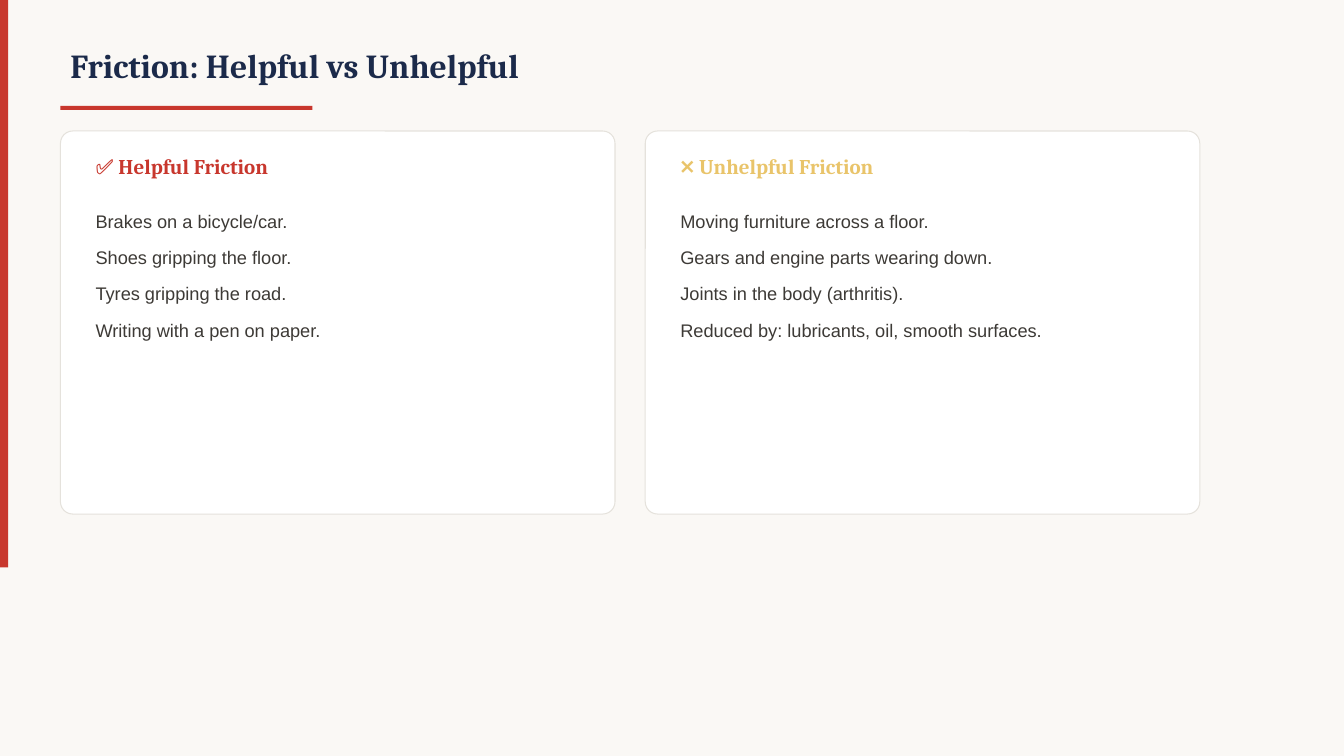
from pptx import Presentation
from pptx import util as u
from pptx.dml.color import RGBColor
from pptx.enum import shapes, text

PX = 9144
CREAM = RGBColor(0xFA, 0xF8, 0xF5)
WHITE = RGBColor(0xFF, 0xFF, 0xFF)
EDGE = RGBColor(0xE5, 0xE2, 0xDC)
RED = RGBColor(0xC8, 0x37, 0x2D)
GOLD = RGBColor(0xE9, 0xC4, 0x6A)
NAVY = RGBColor(0x1B, 0x2A, 0x4A)
INK = RGBColor(0x3D, 0x3A, 0x36)

CARDS = [
    ("✅ Helpful Friction", RED, [
        "Brakes on a bicycle/car.",
        "Shoes gripping the floor.",
        "Tyres gripping the road.",
        "Writing with a pen on paper.",
    ]),
    ("❌ Unhelpful Friction", GOLD, [
        "Moving furniture across a floor.",
        "Gears and engine parts wearing down.",
        "Joints in the body (arthritis).",
        "Reduced by: lubricants, oil, smooth surfaces.",
    ]),
]


def scale(*px):
    """Turn px lengths into EMU."""
    return [u.Emu(n * PX) for n in px]


def add_bar(slide, *box):
    """Add a plain red bar."""
    bar = slide.shapes.add_shape(shapes.MSO_SHAPE.RECTANGLE, *scale(*box))
    bar.shadow.inherit = False
    bar.fill.solid()
    bar.fill.fore_color.rgb = RED
    bar.line.fill.background()


def add_panel(slide, *box):
    """Add a white rounded panel with a thin edge."""
    panel = slide.shapes.add_shape(shapes.MSO_SHAPE.ROUNDED_RECTANGLE, *scale(*box))
    panel.adjustments[0] = 0.032
    panel.shadow.inherit = False
    panel.fill.solid()
    panel.fill.fore_color.rgb = WHITE
    panel.line.color.rgb = EDGE
    panel.line.width = u.Pt(0.75)


def add_frame(slide, box, anchor):
    """Add an empty wrapping text box and return its frame."""
    frame = slide.shapes.add_textbox(*scale(*box)).text_frame
    frame.word_wrap = True
    frame.vertical_anchor = anchor
    return frame


def add_run(para, words, size, font, color, bold=False):
    """Add one styled run to a paragraph."""
    run = para.add_run()
    run.text = words
    run.font.size = u.Pt(size)
    run.font.name = font
    run.font.bold = bold
    run.font.color.rgb = color


def add_head(slide, box, words, size, color):
    """Add a bold serif heading."""
    frame = add_frame(slide, box, text.MSO_ANCHOR.MIDDLE)
    add_run(frame.paragraphs[0], words, size, "Cambria", color, True)


def add_list(slide, box, lines):
    """Add body lines, one paragraph each."""
    frame = add_frame(slide, box, text.MSO_ANCHOR.TOP)
    for i, line in enumerate(lines):
        para = frame.add_paragraph() if i else frame.paragraphs[0]
        para.line_spacing = 1.4
        para.space_after = u.Pt(4)
        add_run(para, line, 13, "Arial", INK)


def add_card(slide, left, title, color, lines):
    """Add a panel with its heading and list."""
    add_panel(slide, left, 130, 550, 380)
    add_head(slide, (left + 25, 145, 500, 40), title, 15, color)
    add_list(slide, (left + 25, 195, 500, 290), lines)


def main():
    """Build and save the friction slide."""
    deck = Presentation()
    deck.slide_width, deck.slide_height = scale(1333, 750)
    slide = deck.slides.add_slide(deck.slide_layouts[6])
    slide.background.fill.solid()
    slide.background.fill.fore_color.rgb = CREAM
    add_bar(slide, 0, 0, 8, 563)
    add_head(slide, (60, 30, 1000, 70), "Friction: Helpful vs Unhelpful", 24, NAVY)
    add_bar(slide, 60, 105, 250, 4)
    for i, card in enumerate(CARDS):
        add_card(slide, 60 + 580 * i, *card)
    deck.save("out.pptx")


if __name__ == "__main__":
    main()
